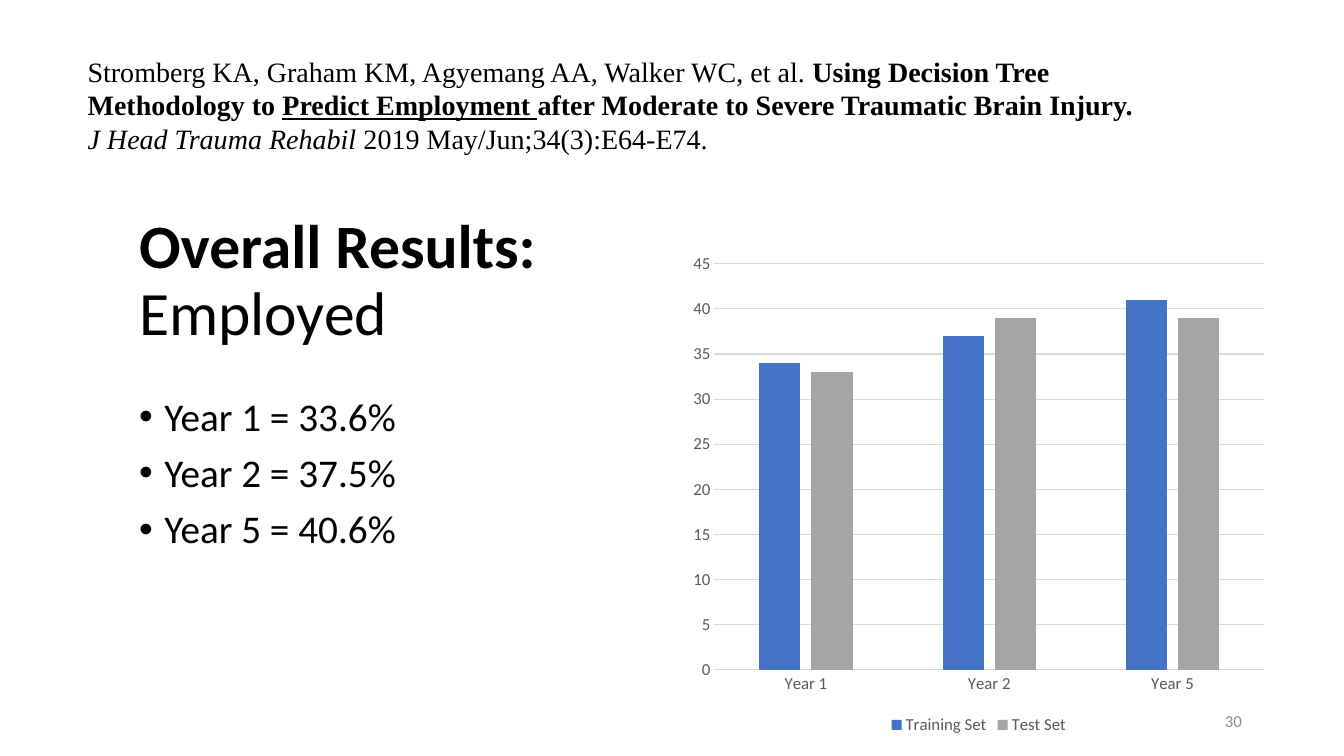
"""Build the overall employment results slide with its citation and bar chart."""
from dataclasses import dataclass

from lxml import etree
from pptx import Presentation, util as u
from pptx.chart.data import CategoryChartData
from pptx.dml.color import RGBColor
from pptx.enum import chart as ch, text as t
from pptx.oxml.ns import qn

HEADING = [("Overall Results:", {"bold": True}), ("Employed", {"bold": False})]
RESULTS = ["Year 1 = 33.6%", "Year 2 = 37.5%", "Year 5 = 40.6%"]
YEARS = ["Year 1", "Year 2", "Year 5"]
EMPLOYMENT = {"Training Set": (34, 37, 41), "Test Set": (33, 39, 39)}
PAGE = "30"
CITATION = [
    ("Stromberg KA, Graham KM, Agyemang AA, Walker WC, et al. ", {}),
    ("Using Decision Tree Methodology to ", {"bold": True}),
    ("Predict Employment ", {"bold": True, "underline": True}),
    ("after Moderate to Severe Traumatic Brain Injury. ", {"bold": True}),
    ("J Head Trauma Rehabil", {"italic": True}),
    (" 2019 May/Jun;34(3):E64-E74.", {}),
]

PLACES = {
    "heading": (9.6, 25.47, 33.6, 26.4),
    "results": (9.6, 51.87, 28.43, 28.13),
    "chart": (50.7, 32.27, 44.25, 65.47),
    "page": (70.65, 92.67, 22.5, 5.33),
    "citation": (5.78, 6.53, 80.7, 14.8),
}


@dataclass(frozen=True)
class Theme:
    sans: str = "Calibri"
    serif: str = "Times New Roman"
    ink: str = "000000"
    label: str = "595959"
    rule: str = "D9D9D9"
    muted: str = "8C8C8C"
    bars: tuple = ("4472C4", "A5A5A5")
    heading: int = 44
    body: int = 28
    citation: int = 20
    small: int = 12


THEME = Theme()
deck = Presentation()
deck.slide_width, deck.slide_height = u.Inches(13.33), u.Inches(7.5)


def place(part):
    """Turn percentages of the slide into lengths."""
    sides = (deck.slide_width, deck.slide_height) * 2
    return [int(side * share / 100) for side, share in zip(sides, PLACES[part])]


def style(font, size, color, face=THEME.sans, **marks):
    font.name, font.size = face, u.Pt(size)
    font.color.rgb = RGBColor.from_string(color)
    for mark, value in marks.items():
        setattr(font, mark, value)


def add_run(paragraph, words, size, color=THEME.ink, face=THEME.sans, **marks):
    run = paragraph.add_run()
    run.text = words
    style(run.font, size, color, face, **marks)


def settle(holder, part, anchor):
    holder.left, holder.top, holder.width, holder.height = place(part)
    frame = holder.text_frame
    frame.word_wrap = True
    frame.auto_size = t.MSO_AUTO_SIZE.NONE
    frame.vertical_anchor = anchor
    return frame


def add_heading(slide):
    frame = settle(slide.shapes.title, "heading", t.MSO_ANCHOR.MIDDLE)
    frame.margin_bottom = u.Inches(0.25)
    line = frame.paragraphs[0]
    line.alignment = t.PP_ALIGN.LEFT
    line.line_spacing, line.space_after = 0.9, u.Pt(12)
    for index, (words, marks) in enumerate(HEADING):
        if index:
            line.add_line_break()
        add_run(line, words, THEME.heading, **marks)


def add_results(slide):
    frame = settle(slide.placeholders[1], "results", t.MSO_ANCHOR.TOP)
    for index, words in enumerate(RESULTS):
        item = frame.add_paragraph() if index else frame.paragraphs[0]
        item.line_spacing, item.space_before = 0.9, u.Pt(10)
        props = item._p.get_or_add_pPr()
        props.set("marL", str(u.Inches(0.25)))
        props.set("indent", str(-u.Inches(0.25)))
        etree.SubElement(props, qn("a:buFont")).set("typeface", "Arial")
        etree.SubElement(props, qn("a:buChar")).set("char", "•")
        add_run(item, words, THEME.body)


def add_employment(slide):
    data = CategoryChartData()
    data.categories = YEARS
    for name, values in EMPLOYMENT.items():
        data.add_series(name, values)
    chart = slide.shapes.add_chart(
        ch.XL_CHART_TYPE.COLUMN_CLUSTERED, *place("chart"), data).chart
    chart.has_title = False
    style(chart.font, THEME.small, THEME.label)
    chart.has_legend = True
    chart.legend.position = ch.XL_LEGEND_POSITION.BOTTOM
    chart.legend.include_in_layout = False
    style(chart.legend.font, THEME.small, THEME.label)

    plot = chart.plots[0]
    plot.gap_width, plot.overlap, plot.vary_by_categories = 219, -27, False
    for series, color in zip(plot.series, THEME.bars):
        series.format.fill.solid()
        series.format.fill.fore_color.rgb = RGBColor.from_string(color)

    years, percent = chart.category_axis, chart.value_axis
    for axis in (years, percent):
        axis.major_tick_mark = axis.minor_tick_mark = ch.XL_TICK_MARK.NONE
        style(axis.tick_labels.font, THEME.small, THEME.label)
    percent.minimum_scale, percent.maximum_scale, percent.major_unit = 0, 45, 5
    percent.format.line.fill.background()
    for line in (years.format.line, percent.major_gridlines.format.line):
        line.color.rgb = RGBColor.from_string(THEME.rule)
        line.width = u.Pt(0.75)


def add_note(slide, part, anchor):
    return settle(slide.shapes.add_textbox(*place(part)), part, anchor).paragraphs[0]


def main():
    slide = deck.slides.add_slide(deck.slide_layouts[1])
    add_heading(slide)
    add_results(slide)
    add_employment(slide)
    page = add_note(slide, "page", t.MSO_ANCHOR.MIDDLE)
    page.alignment = t.PP_ALIGN.RIGHT
    add_run(page, PAGE, THEME.small, THEME.muted)
    citation = add_note(slide, "citation", t.MSO_ANCHOR.TOP)
    for words, marks in CITATION:
        add_run(citation, words, THEME.citation, face=THEME.serif, **marks)
    deck.save("out.pptx")


if __name__ == "__main__":
    main()
